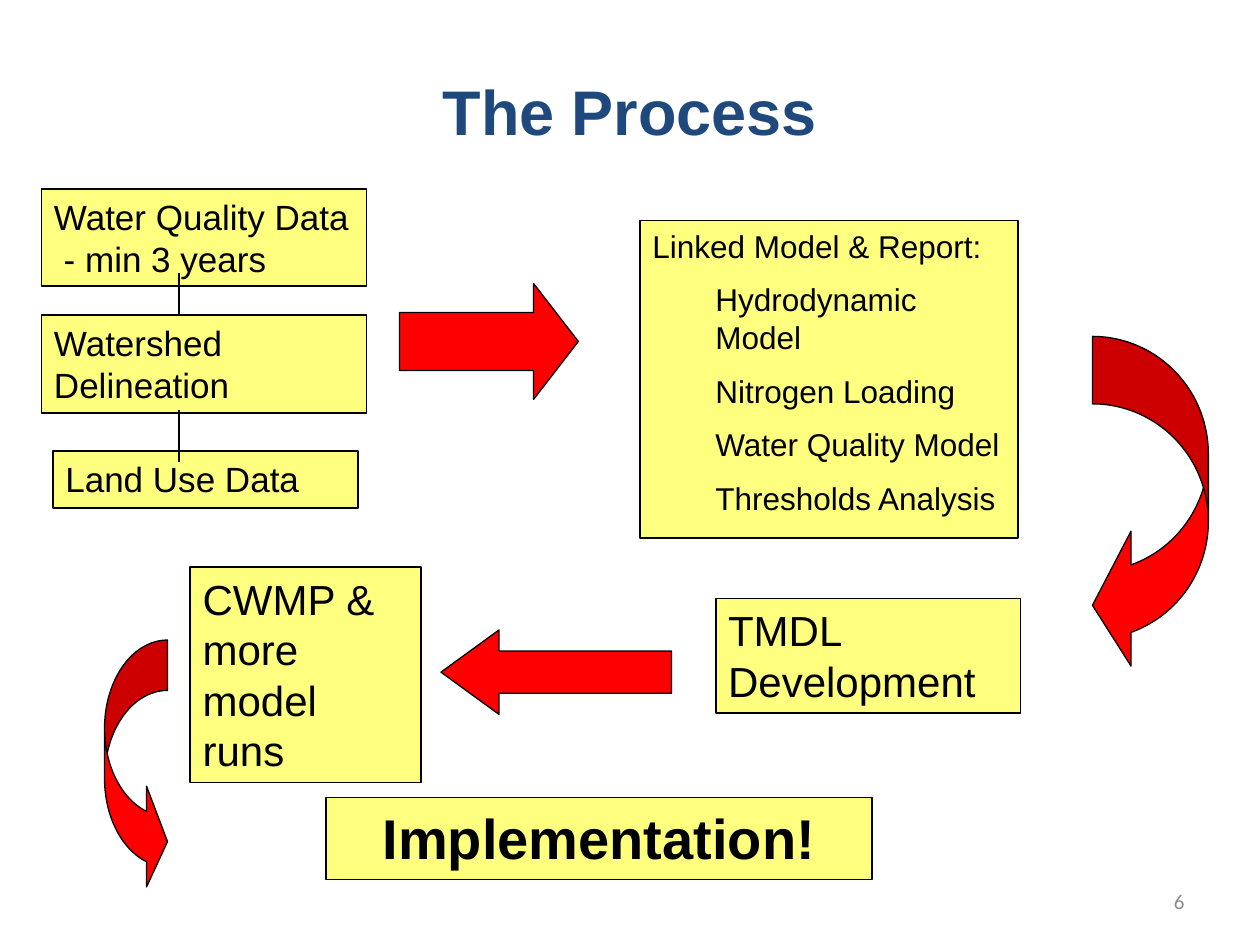
import pptx
import pptx.dml.color
import pptx.enum.shapes
import pptx.enum.text
import pptx.oxml.ns
import pptx.util
from lxml import etree

Inches = pptx.util.Inches
Pt = pptx.util.Pt
RGBColor = pptx.dml.color.RGBColor
Shape = pptx.enum.shapes.MSO_SHAPE
Align = pptx.enum.text.PP_ALIGN
Anchor = pptx.enum.text.MSO_ANCHOR
qn = pptx.oxml.ns.qn

BLACK = RGBColor(0x00, 0x00, 0x00)
NAVY = RGBColor(0x1F, 0x49, 0x7D)
GREY = RGBColor(0x8C, 0x8C, 0x8C)
YELLOW = RGBColor(0xFF, 0xFF, 0x00)
RED = RGBColor(0xFF, 0x00, 0x00)

# Text, place, font size
STEPS = [
    ("Water Quality Data\v - min 3 years", (0.33, 1.5, 2.58, 0.77), 20),
    ("Watershed Delineation", (0.33, 2.5, 2.58, 0.78), 20),
    ("Land Use Data", (0.42, 3.58, 2.42, 0.45), 20),
    ("TMDL Development", (5.68, 4.75, 2.42, 0.91), 24),
    ("CWMP & more model runs", (1.51, 4.5, 1.83, 1.71), 24),
]
MODEL_PARTS = ["Hydrodynamic Model", "Nitrogen Loading",
               "Water Quality Model", "Thresholds Analysis"]
# Preset, place, adjustments
ARROWS = [
    (Shape.CURVED_LEFT_ARROW, (8.67, 2.67, 0.92, 2.67), (0.582, 1.164, 0.333)),
    (Shape.LEFT_ARROW, (3.5, 5, 1.83, 0.67), (0.5, 0.688)),
    (Shape.RIGHT_ARROW, (3.17, 2.25, 1.42, 0.92), (0.5, 0.386)),
    (Shape.CURVED_RIGHT_ARROW, (0.83, 5.08, 0.5, 2), (0.8, 1.6, 0.333)),
]
LINK_X = 1.42
LINKS = [(2.17, 2.5), (3.25, 3.67)]


def write_text(frame, text, size, color=BLACK, font="Arial", bold=False,
               align=Align.LEFT, anchor=Anchor.TOP, details=()):
    """Write text, then the details as indented paragraphs below it."""
    frame.word_wrap = True
    frame.vertical_anchor = anchor
    for index, line in enumerate((text, *details)):
        paragraph = frame.paragraphs[0] if index == 0 else frame.add_paragraph()
        paragraph.text = line
        paragraph.alignment = align
        if index:
            paragraph.level = 1
            paragraph.space_before = Pt(size / 2)
            properties = paragraph._p.get_or_add_pPr()
            properties.set("marL", str(Inches(0.5)))
            properties.set("indent", "0")
        paragraph.font.name = font
        paragraph.font.size = Pt(size)
        paragraph.font.bold = bold
        paragraph.font.color.rgb = color


def add_label(slide, place, text, size, **text_format):
    label = slide.shapes.add_textbox(*map(Inches, place))
    write_text(label.text_frame, text, size, anchor=Anchor.MIDDLE, **text_format)


def add_filled_shape(slide, preset, place, fill, line_width):
    shape = slide.shapes.add_shape(preset, *map(Inches, place))
    shape.shadow.inherit = False
    shape.fill.solid()
    shape.fill.fore_color.rgb = fill
    shape.line.color.rgb = BLACK
    shape.line.width = Pt(line_width)
    return shape


def add_step(slide, place, text, size, **text_format):
    """Add a half-transparent yellow box with text."""
    step = add_filled_shape(slide, Shape.RECTANGLE, place, YELLOW, 1)
    color = step._element.spPr.find(qn("a:solidFill")).find(qn("a:srgbClr"))
    etree.SubElement(color, qn("a:alpha"), val="50000")
    write_text(step.text_frame, text, size, **text_format)


def add_arrow(slide, preset, place, adjustments):
    arrow = add_filled_shape(slide, preset, place, RED, 0.75)
    for index, value in enumerate(adjustments):
        arrow.adjustments[index] = value


def add_link(slide, top, bottom):
    link = slide.shapes.add_connector(
        pptx.enum.shapes.MSO_CONNECTOR.STRAIGHT,
        Inches(LINK_X), Inches(top), Inches(LINK_X), Inches(bottom))
    link.line.color.rgb = BLACK
    link.line.width = Pt(0.75)
    etree.SubElement(link._element.spPr, qn("a:effectLst"))


def main():
    deck = pptx.Presentation()
    deck.slide_width, deck.slide_height = Inches(10), Inches(7.5)
    slide = deck.slides.add_slide(deck.slide_layouts[6])

    add_label(slide, (7.17, 6.95, 2.33, 0.4), "6", 12,
              color=GREY, font="Calibri", align=Align.RIGHT)
    add_label(slide, (0.75, 0.25, 8.5, 1.25), "The Process", 36,
              color=NAVY, bold=True, align=Align.CENTER)
    add_step(slide, (5.08, 1.75, 3, 2.52), "Linked Model & Report:", 18,
             details=MODEL_PARTS)
    for text, place, size in STEPS:
        add_step(slide, place, text, size)
    for top, bottom in LINKS:
        add_link(slide, top, bottom)
    for preset, place, adjustments in ARROWS:
        add_arrow(slide, preset, place, adjustments)
    add_step(slide, (2.59, 6.33, 4.33, 0.65), "Implementation!", 32,
             bold=True, align=Align.CENTER)

    deck.save("out.pptx")


if __name__ == "__main__":
    main()
